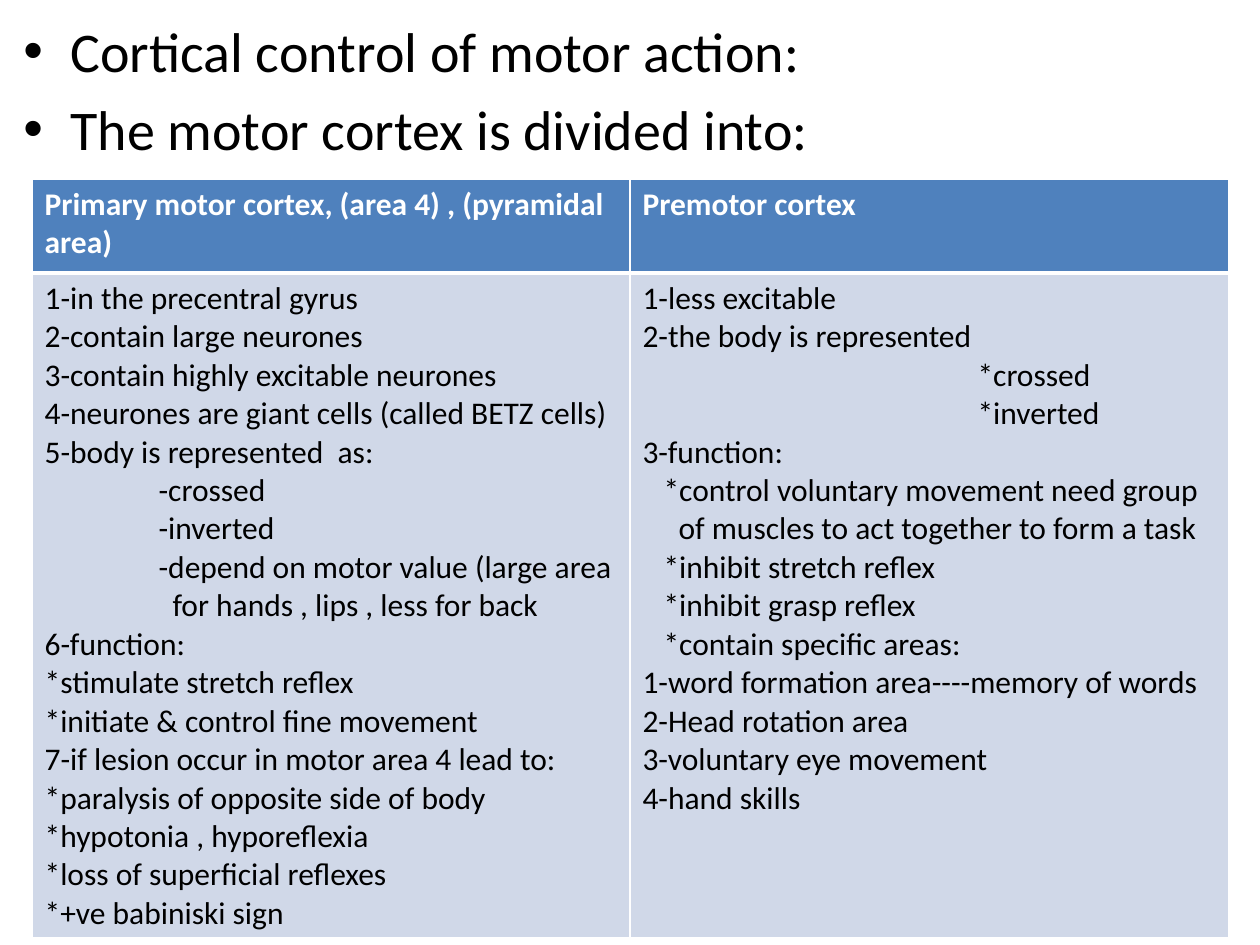
from lxml.etree import SubElement
from pptx import Presentation
from pptx.dml.color import RGBColor as RGB
from pptx.oxml.ns import qn
from pptx.util import Pt

PX = 914400 / 126


def px(n):
    return round(n * PX)


def write(tf, lines, fmt, color):
    """Write (text, left margin in px, hanging indent in px) lines."""
    for i, (text, left, hang) in enumerate(lines):
        p = tf.paragraphs[0] if i == 0 else tf.add_paragraph()
        pPr = p._p.get_or_add_pPr()
        pPr.set("marL", str(px(left)))
        pPr.set("indent", str(px(-hang)))
        r = p.add_run()
        r.text = text
        for name, value in fmt.items():
            setattr(r.font, name, value)
        r.font.color.rgb = RGB.from_string(color)


prs = Presentation()
prs.slide_width, prs.slide_height = px(1260), px(945)
s = prs.slides.add_slide(prs.slide_layouts[6])

# Bulleted heading
tf = s.shapes.add_textbox(px(11), px(10), px(1229), px(160)).text_frame
tf.word_wrap = True
heading = ["Cortical control of motor action:", "The motor cortex is divided into:"]
write(tf, [(t, 47, 47) for t in heading], {"size": Pt(32), "name": "Calibri"}, "000000")
for p in tf.paragraphs:
    p.space_before = Pt(6.4)
    pPr = p._p.get_or_add_pPr()
    SubElement(pPr, qn("a:buFont"), typeface="Arial")
    SubElement(pPr, qn("a:buChar"), char="•")

# Table content: plain lines, or (text, indent in px)
headers = ["Primary motor cortex, (area 4) , (pyramidal area)", "Premotor cortex"]
primary = [
    "1-in the precentral gyrus",
    "2-contain large neurones",
    "3-contain highly excitable neurones",
    "4-neurones are giant cells (called BETZ cells)",
    "5-body is represented  as:",
    ("-crossed", 114),
    ("-inverted", 114),
    ("-depend on motor value (large area", 114),
    ("for hands , lips , less for back", 128),
    "6-function:",
    "*stimulate stretch reflex",
    "*initiate & control fine movement",
    "7-if lesion occur in motor area 4 lead to:",
    "*paralysis of opposite side of body",
    "*hypotonia , hyporeflexia",
    "*loss of superficial reflexes",
    "*+ve babiniski sign",
]
premotor = [
    "1-less excitable",
    "2-the body is represented",
    ("*crossed", 335),
    ("*inverted", 335),
    "3-function:",
    ("*control voluntary movement need group", 21),
    ("of muscles to act together to form a task", 36),
    ("*inhibit stretch reflex", 21),
    ("*inhibit grasp reflex", 21),
    ("*contain specific areas:", 21),
    "1-word formation area----memory of words",
    "2-Head rotation area",
    "3-voluntary eye movement",
    "4-hand skills",
]
rows = [[[h] for h in headers], [primary, premotor]]
row_styles = [  # height, fill, text colour, bold, top and bottom border in points
    (94, "4F81BD", "FFFFFF", True, 1, 3),
    (665, "D0D8E8", "000000", False, 3, 1),
]

# Comparison table
height = sum(style[0] for style in row_styles)
table = s.shapes.add_table(2, 2, px(32), px(179), px(1197), px(height)).table
for col, width in zip(table.columns, (598, 599)):
    col.width = px(width)
for i, (height, fill, color, bold, top, bottom) in enumerate(row_styles):
    table.rows[i].height = px(height)
    for j, lines in enumerate(rows[i]):
        cell = table.cell(i, j)
        pairs = [(t, 0) if isinstance(t, str) else t for t in lines]
        fmt = {"size": Pt(18), "name": "Calibri", "bold": bold}
        write(cell.text_frame, [(t, left, 0) for t, left in pairs], fmt, color)
        tcPr = cell._tc.get_or_add_tcPr()
        for side, weight in zip("LRTB", (1, 1, top, bottom)):
            ln = SubElement(tcPr, qn(f"a:ln{side}"), w=str(Pt(weight)))
            SubElement(SubElement(ln, qn("a:solidFill")), qn("a:srgbClr"), val="FFFFFF")
        cell.fill.solid()
        cell.fill.fore_color.rgb = RGB.from_string(fill)

prs.save("out.pptx")
